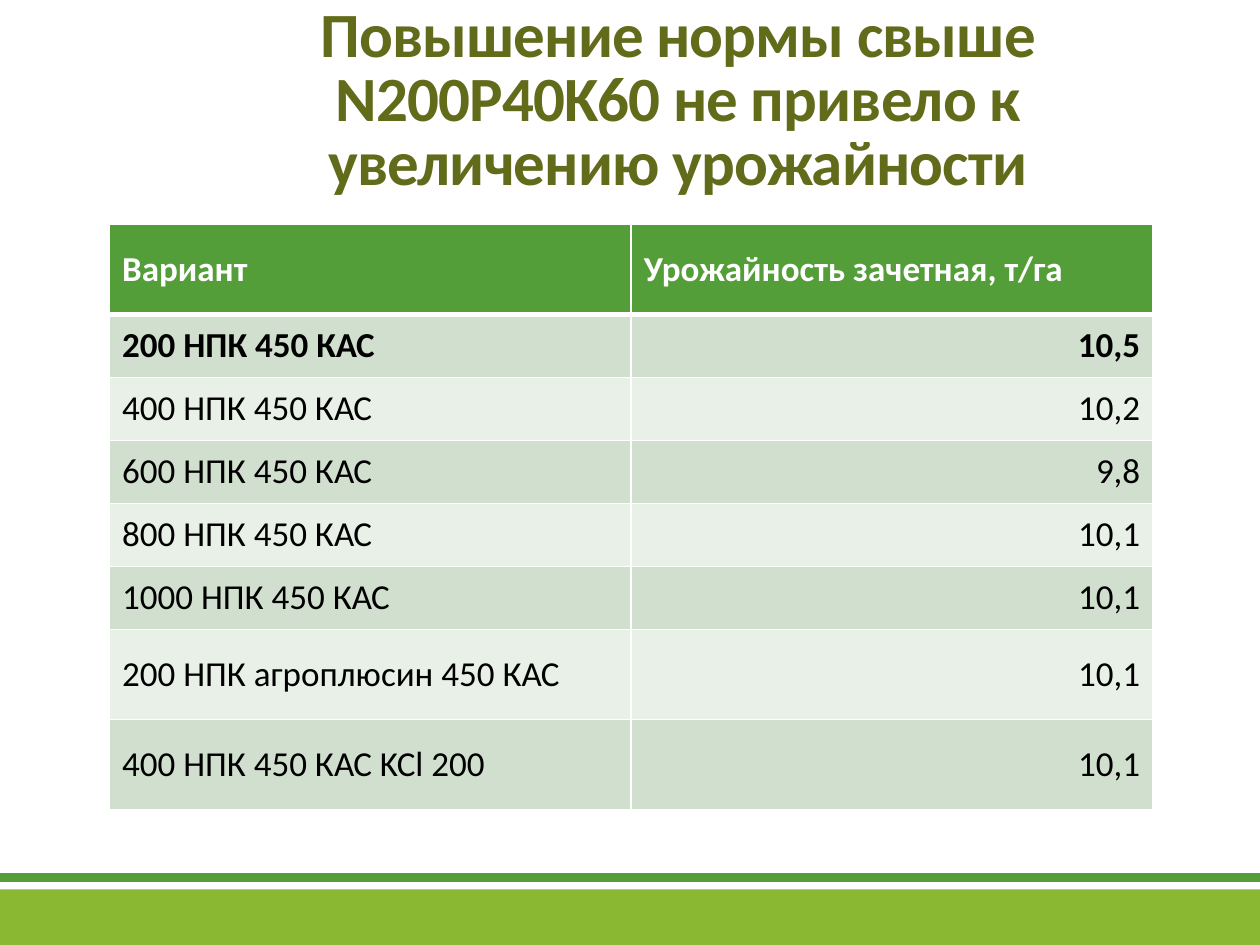
import lxml.etree
import pptx
import pptx.dml.color
import pptx.enum.shapes
import pptx.enum.text
import pptx.oxml.ns
import pptx.util

inch = pptx.util.Inches
align = pptx.enum.text.PP_ALIGN
middle = pptx.enum.text.MSO_ANCHOR.MIDDLE
qn = pptx.oxml.ns.qn


def color(value):
    return pptx.dml.color.RGBColor.from_string(value)


def write(frame, text, alignment, size, ink, bold):
    """Fill the first paragraph of a text frame and return its run."""
    para = frame.paragraphs[0]
    para.alignment = alignment
    span = para.add_run()
    span.text = text
    formats = {"name": "Calibri", "size": pptx.util.Pt(size), "bold": bold}
    for name, value in formats.items():
        setattr(span.font, name, value)
    span.font.color.rgb = color(ink)
    return span


WIDTH, HEIGHT = 10, 7.5
deck = pptx.Presentation()
deck.slide_width, deck.slide_height = inch(WIDTH), inch(HEIGHT)
page = deck.slides.add_slide(deck.slide_layouts[6])

# Footer bands
for top, height, fill in [(7.06, HEIGHT - 7.06, "8AB833"), (6.93, 0.07, "549E39")]:
    band = page.shapes.add_shape(
        pptx.enum.shapes.MSO_SHAPE.RECTANGLE, 0, inch(top), inch(WIDTH), inch(height))
    band.shadow.inherit = False
    band.fill.solid()
    band.fill.fore_color.rgb = color(fill)
    band.line.fill.background()

# Title
title = page.shapes.add_textbox(inch(1.61), inch(0.31), inch(7.54), inch(1)).text_frame
title.word_wrap = True
title.vertical_anchor = middle
title.paragraphs[0].line_spacing = 0.85
heading = write(title, "Повышение нормы свыше N200P40K60 не привело к увеличению урожайности",
                align.CENTER, 36, "626B1A", True)
heading.font._element.set("spc", "-50")

# Yield table
rows = [
    ("Вариант", "Урожайность зачетная, т/га"),
    ("200 НПК 450 КАС", "10,5"),
    ("400 НПК 450 КАС", "10,2"),
    ("600 НПК 450 КАС", "9,8"),
    ("800 НПК 450 КАС", "10,1"),
    ("1000 НПК 450 КАС", "10,1"),
    ("200 НПК агроплюсин 450 КАС", "10,1"),
    ("400 НПК 450 КАС KCl 200", "10,1"),
]
TALL, SHORT = 0.715, 0.5
heights = [TALL] + [SHORT] * 5 + [TALL] * 2
table = page.shapes.add_table(
    len(rows), 2, inch(0.87), inch(1.78), inch(8.28), inch(sum(heights))).table

for row, texts in enumerate(rows):
    table.rows[row].height = inch(heights[row])
    header = row == 0
    fill = "549E39" if header else ("E9F0E8", "D1DFCE")[row % 2]
    for column, text in enumerate(texts):
        cell = table.cell(row, column)
        cell.vertical_anchor = middle
        write(cell.text_frame, text,
              align.RIGHT if column and not header else align.LEFT,
              20, "FFFFFF" if header else "000000", row < 2)
        properties = cell._tc.get_or_add_tcPr()
        for side in ("lnL", "lnR", "lnT", "lnB"):
            thick = (header and side == "lnB") or (row == 1 and side == "lnT")
            border = lxml.etree.SubElement(
                properties, qn("a:" + side), w=str(pptx.util.Pt(3 if thick else 1)))
            solid = lxml.etree.SubElement(border, qn("a:solidFill"))
            lxml.etree.SubElement(solid, qn("a:srgbClr"), val="FFFFFF")
        cell.fill.solid()
        cell.fill.fore_color.rgb = color(fill)

deck.save("out.pptx")
